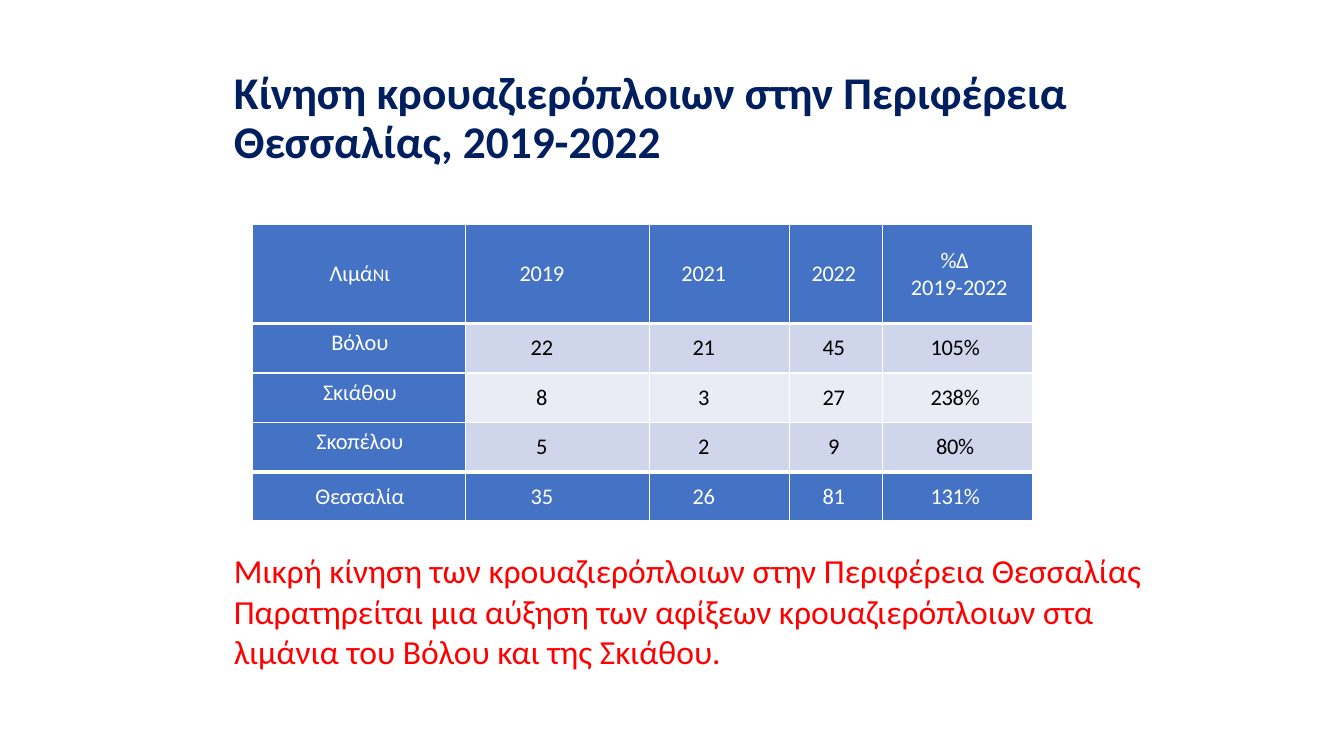
"""Build the slide on cruise ship traffic in the Region of Thessaly."""
from dataclasses import dataclass
from typing import Optional

from lxml import etree
from pptx import Presentation
from pptx import util as u
from pptx.dml import color
from pptx.enum import text
from pptx.oxml import ns


@dataclass(frozen=True)
class Theme:
    font: str = "Calibri"
    title: str = "001F5F"
    note: str = "FF0000"
    accent: str = "4472C4"
    bands: tuple[str, str] = ("CFD5EA", "E9EBF5")
    white: str = "FFFFFF"
    black: str = "000000"
    title_size: float = 32.4
    note_size: float = 24
    table_size: float = 16


@dataclass(frozen=True)
class Span:
    words: str
    spacing: int = 0
    small_caps: bool = False


@dataclass(frozen=True)
class Line:
    spans: tuple[Span, ...]
    indent: float = 0
    centred: bool = True
    exact: Optional[float] = None


@dataclass(frozen=True)
class Port:
    name: str
    values: tuple[str, ...]
    exact: Optional[float] = None


THEME = Theme()
COLUMNS = (2.12, 1.82, 1.39, 0.92, 1.49)
RIGHT_INSETS = (0, 0.31, 0.31, 0.04, 0.04)
ROWS = (0.98, 0.49, 0.49, 0.49, 0.49)
PORTS = (
    Port("Βόλου", ("22", "21", "45", "105%"), 12),
    Port("Σκιάθου", ("8", "3", "27", "238%"), 12.6),
    Port("Σκοπέλου", ("5", "2", "9", "80%"), 12),
    Port("Θεσσαλία", ("35", "26", "81", "131%")),
)


def add_span(para, span: Span, size: float, shade: str, bold: bool = False) -> None:
    run = para.add_run()
    run.text = span.words
    run.font.name = THEME.font
    run.font.size = u.Pt(size)
    run.font.bold = bold
    run.font.color.rgb = color.RGBColor.from_string(shade)
    properties = run.font._element
    if span.spacing:
        properties.set("spc", str(span.spacing))
    if span.small_caps:
        properties.set("cap", "small")


def add_border(cell, side: str, width: float) -> None:
    properties = cell._tc.get_or_add_tcPr()
    border = etree.SubElement(properties, ns.qn(f"a:ln{side}"), w=str(u.Pt(width)))
    fill = etree.SubElement(border, ns.qn("a:solidFill"))
    etree.SubElement(fill, ns.qn("a:srgbClr"), val=THEME.white)


def number(words: str) -> tuple[Line, ...]:
    return (Line((Span(words, -50 if len(words) == 1 else -20),)),)


def table_lines() -> list[list[tuple[Line, ...]]]:
    port = Line((Span("Λιμά", -10), Span("ν", -10, True), Span("ι", -10)), 0.02)
    change = (
        Line((Span("%Δ", -20),), 0.58, centred=False),
        Line((Span("2019-"), Span("2022", -20)), 0.08),
    )
    header = [(port,), *map(number, ("2019", "2021", "2022")), change]
    body = [
        [(Line((Span(p.name, -10),), 0.02, exact=p.exact),), *map(number, p.values)]
        for p in PORTS
    ]
    return [header, *body]


def fill_cell(cell, lines: tuple[Line, ...], row: int, column: int) -> None:
    last = len(ROWS) - 1
    strong = row in (0, last) or column == 0
    widths = {"L": 1, "R": 1, "T": 3 if row == last else 1, "B": 3 if row == 0 else 1}
    for side, width in widths.items():
        add_border(cell, side, width)
    shade = THEME.accent if strong else THEME.bands[(row - 1) % 2]
    cell.fill.solid()
    cell.fill.fore_color.rgb = color.RGBColor.from_string(shade)
    cell.vertical_anchor = text.MSO_ANCHOR.MIDDLE
    cell.margin_left = cell.margin_top = cell.margin_bottom = 0
    cell.margin_right = u.Inches(RIGHT_INSETS[column])
    frame = cell.text_frame
    for index, line in enumerate(lines):
        para = frame.add_paragraph() if index else frame.paragraphs[0]
        para.alignment = text.PP_ALIGN.CENTER if line.centred else text.PP_ALIGN.LEFT
        para._p.get_or_add_pPr().set("marL", str(u.Inches(line.indent)))
        if line.exact:
            para.line_spacing = u.Pt(line.exact)
        for span in line.spans:
            add_span(para, span, THEME.table_size, THEME.white if strong else THEME.black)


def add_traffic_table(page) -> None:
    frame = page.shapes.add_table(
        len(ROWS), len(COLUMNS), u.Inches(2.5), u.Inches(2.23),
        u.Inches(sum(COLUMNS)), u.Inches(sum(ROWS)),
    )
    table = frame.table
    table.first_row = table.horz_banding = False
    for column, width in zip(table.columns, COLUMNS):
        column.width = u.Inches(width)
    for row, height in zip(table.rows, ROWS):
        row.height = u.Inches(height)
    for row, cells in enumerate(table_lines()):
        for column, lines in enumerate(cells):
            fill_cell(table.cell(row, column), lines, row, column)


def add_title(page) -> None:
    box = page.shapes.title
    box.left, box.top = u.Inches(2.22), u.Inches(0.7)
    box.width, box.height = u.Inches(9.74), u.Inches(1.45)
    frame = box.text_frame
    frame.word_wrap = True
    frame.auto_size = text.MSO_AUTO_SIZE.NONE
    frame.vertical_anchor = text.MSO_ANCHOR.TOP
    frame.margin_top = 0
    para = frame.paragraphs[0]
    para.alignment = text.PP_ALIGN.LEFT
    para.line_spacing = 0.9
    words = "Κίνηση κρουαζιερόπλοιων στην Περιφέρεια Θεσσαλίας, 2019-2022"
    add_span(para, Span(words), THEME.title_size, THEME.title, bold=True)


def add_note(page) -> None:
    box = page.shapes.add_textbox(
        u.Inches(2.22), u.Inches(5.41), u.Inches(9.25), u.Inches(1.31)
    )
    frame = box.text_frame
    frame.word_wrap = True
    frame.auto_size = text.MSO_AUTO_SIZE.SHAPE_TO_FIT_TEXT
    words = (
        "Μικρή κίνηση των κρουαζιερόπλοιων στην Περιφέρεια Θεσσαλίας "
        "Παρατηρείται μια αύξηση των αφίξεων κρουαζιερόπλοιων στα "
        "λιμάνια του Βόλου και της Σκιάθου."
    )
    add_span(frame.paragraphs[0], Span(words), THEME.note_size, THEME.note)


def main() -> None:
    deck = Presentation()
    deck.slide_width, deck.slide_height = u.Inches(13.33), u.Inches(7.5)
    page = deck.slides.add_slide(deck.slide_layouts.get_by_name("Title Only"))
    add_title(page)
    add_traffic_table(page)
    add_note(page)
    deck.save("out.pptx")


if __name__ == "__main__":
    main()
